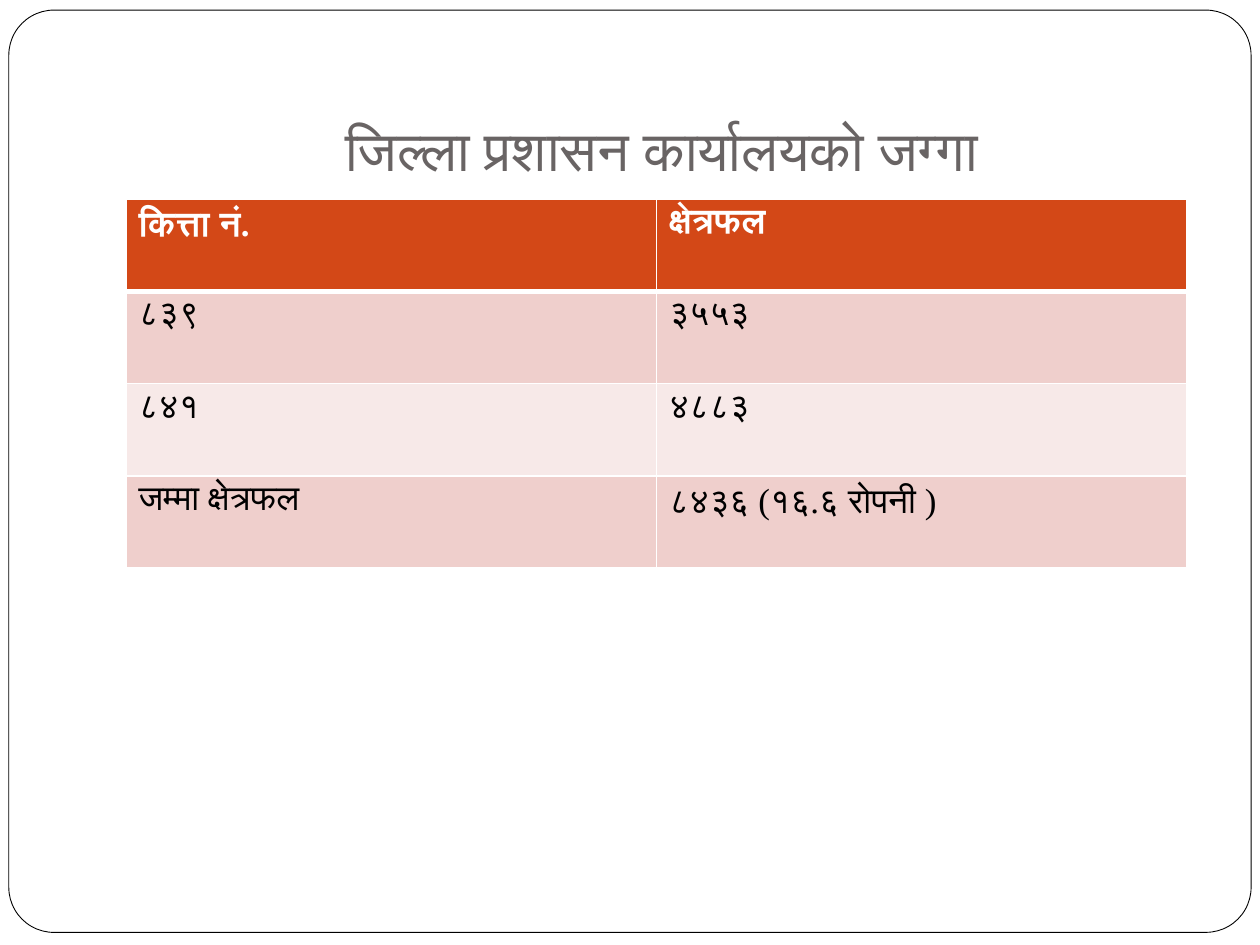
from lxml.etree import SubElement
from pptx import Presentation
from pptx.dml.color import RGBColor
from pptx.enum.shapes import MSO_SHAPE
from pptx.enum.text import MSO_ANCHOR, PP_ALIGN
from pptx.oxml.ns import qn
from pptx.util import Inches, Pt

COLORS = {
    "white": "FFFFFF",
    "black": "000000",
    "title": "696464",
    "header": "D34817",
    "odd": "EFCFCC",
    "even": "F7E9E8",
}
ROWS = [
    ("कित्ता नं.", "क्षेत्रफल"),
    ("८३९", "३५५३"),
    ("८४१", "४८८३"),
    ("जम्मा क्षेत्रफल", "८४३६ (१६.६ रोपनी )"),
]


def rgb(name):
    return RGBColor.from_string(COLORS[name])


def write_text(frame, text, font="Times New Roman", size=20, color="black",
               bold=False, align=PP_ALIGN.LEFT):
    para = frame.paragraphs[0]
    para.alignment = align
    span = para.add_run()
    span.text = text
    span.font.name = font
    span.font.size = Pt(size)
    span.font.bold = bold
    span.font.color.rgb = rgb(color)


def add_frame(page):
    frame = page.shapes.add_shape(
        MSO_SHAPE.ROUNDED_RECTANGLE,
        Inches(0.07), Inches(0.08), Inches(9.86), Inches(7.32))
    frame.adjustments[0] = 0.049
    frame.shadow.inherit = False
    frame.fill.solid()
    frame.fill.fore_color.rgb = rgb("white")
    frame.line.color.rgb = rgb("black")
    frame.line.width = Pt(0.5)


def add_title(page, text):
    box = page.shapes.add_textbox(Inches(1), Inches(0.3), Inches(8.5), Inches(1.25))
    frame = box.text_frame
    frame.word_wrap = True
    frame.vertical_anchor = MSO_ANCHOR.BOTTOM
    frame.margin_bottom = Inches(0.1)
    write_text(frame, text, font="Karla", size=32, color="title", align=PP_ALIGN.CENTER)


def set_borders(cell, **widths):
    properties = cell._tc.get_or_add_tcPr()
    for index, (side, width) in enumerate(widths.items()):
        line = SubElement(properties, qn(f"a:ln{side}"), w=str(Pt(width)))
        fill = SubElement(line, qn("a:solidFill"))
        SubElement(fill, qn("a:srgbClr"), val=COLORS["white"])
        properties.insert(index, line)


def add_land_table(page):
    table = page.shapes.add_table(
        len(ROWS), 2, Inches(1), Inches(1.58), Inches(8.42), Inches(2.93)).table
    for row, texts in enumerate(ROWS):
        is_header = row == 0
        fill = "header" if is_header else "odd" if row % 2 else "even"
        for column, text in enumerate(texts):
            cell = table.cell(row, column)
            cell.fill.solid()
            cell.fill.fore_color.rgb = rgb(fill)
            set_borders(cell, L=1, R=1, T=3 if row == 1 else 1, B=3 if is_header else 1)
            write_text(cell.text_frame, text, bold=is_header,
                       color="white" if is_header else "black")


def main():
    deck = Presentation()
    deck.slide_width = Inches(10)
    deck.slide_height = Inches(7.5)
    page = deck.slides.add_slide(deck.slide_layouts[6])
    add_frame(page)
    add_title(page, "जिल्ला प्रशासन कार्यालयको जग्गा")
    add_land_table(page)
    deck.save("out.pptx")


if __name__ == "__main__":
    main()
